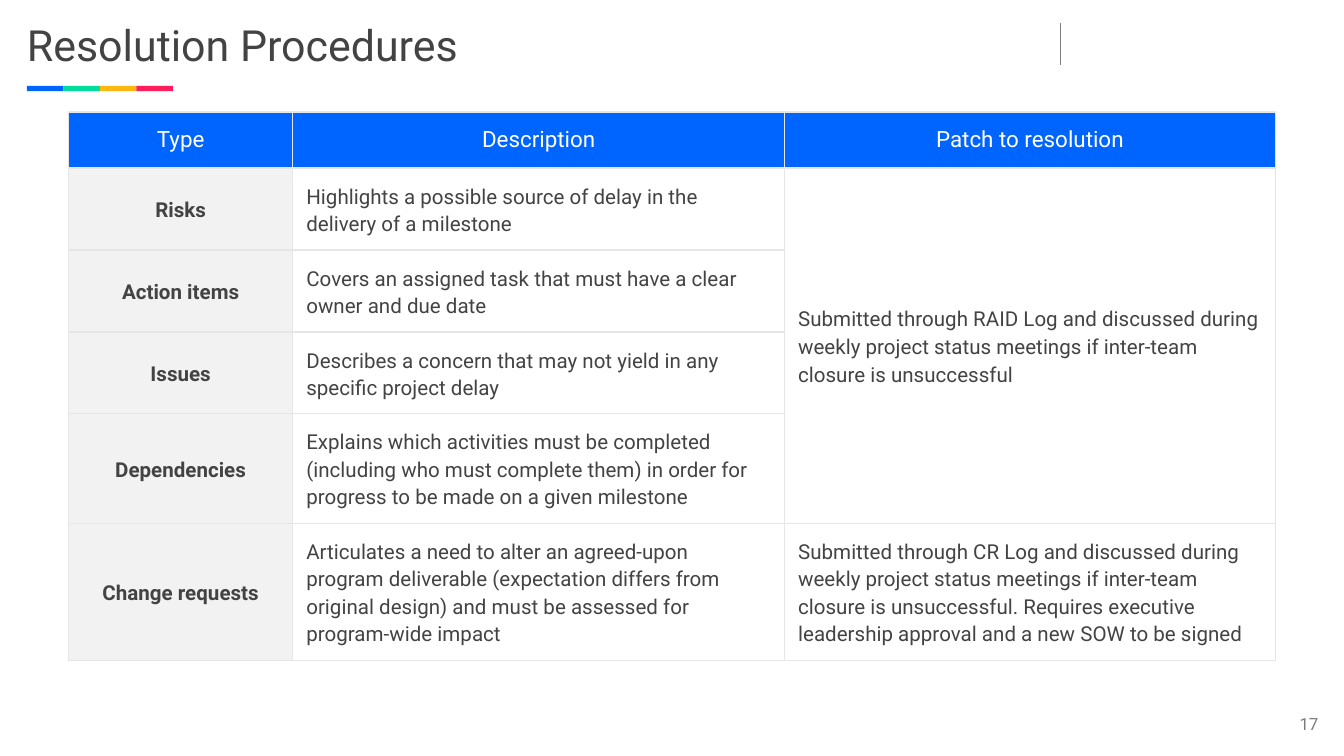
from dataclasses import dataclass

from lxml.etree import SubElement
from pptx import Presentation
from pptx.dml.color import RGBColor
from pptx.enum.shapes import MSO_CONNECTOR, MSO_SHAPE
from pptx.enum.text import MSO_ANCHOR, MSO_AUTO_SIZE, PP_ALIGN
from pptx.oxml.ns import qn
from pptx.util import Pt


@dataclass(frozen=True)
class Theme:
    font: str = "Roboto"
    text: str = "434343"
    muted: str = "7D7D7D"
    white: str = "FFFFFF"
    blue: str = "0064FF"
    label: str = "F2F2F2"
    border: str = "E6E6E6"
    accents: tuple = ("0064FF", "00DC9B", "FFB712", "FF1E5A")
    title_size: float = 23
    head_size: float = 12
    body_size: float = 11
    number_size: float = 9
    rule: float = 0.75


HEADERS = ["Type", "Description", "Patch to resolution"]
ROWS = [
    ["Risks", "Highlights a possible source of delay in the delivery of a milestone",
     "Submitted through RAID Log and discussed during weekly project status meetings "
     "if inter-team closure is unsuccessful"],
    ["Action items", "Covers an assigned task that must have a clear owner and due date", ""],
    ["Issues", "Describes a concern that may not yield in any specific project delay", ""],
    ["Dependencies", "Explains which activities must be completed (including who must complete "
     "them) in order for progress to be made on a given milestone", ""],
    ["Change requests", "Articulates a need to alter an agreed-upon program deliverable "
     "(expectation differs from original design) and must be assessed for program-wide impact",
     "Submitted through CR Log and discussed during weekly project status meetings if "
     "inter-team closure is unsuccessful. Requires executive leadership approval and a new "
     "SOW to be signed"],
]
COL_WIDTHS = [120.2, 263.5, 262.8]
ROW_HEIGHTS = [30, 41, 41, 41, 41, 55]


class SlideBuilder:
    """Adds styled elements to the current slide."""

    def __init__(self, s, theme):
        self.s = s
        self.theme = theme

    def add_text(self, tf, text, size, color, bold=False, align=PP_ALIGN.LEFT, spacing=1.0):
        """Put one styled run into the first paragraph of a frame."""
        p = tf.paragraphs[0]
        p.alignment = align
        p.line_spacing = spacing
        r = p.add_run()
        r.text = text
        r.font.name = self.theme.font
        r.font.size = Pt(size)
        r.font.bold = bold
        r.font.color.rgb = RGBColor.from_string(color)

    def frame(self, tf, anchor, left, other):
        """Set wrapping, anchor and insets of a text frame."""
        tf.word_wrap = True
        tf.auto_size = MSO_AUTO_SIZE.NONE
        tf.vertical_anchor = anchor
        tf.margin_left = Pt(left)
        tf.margin_top = tf.margin_right = tf.margin_bottom = Pt(other)

    def title(self, text, x, y, w, h):
        """Place and fill the title placeholder."""
        sp = self.s.shapes.title
        sp.left, sp.top, sp.width, sp.height = Pt(x), Pt(y), Pt(w), Pt(h)
        self.frame(sp.text_frame, MSO_ANCHOR.MIDDLE, 14.4, 7.2)
        self.add_text(sp.text_frame, text, self.theme.title_size, self.theme.text)

    def page_number(self, text, x, y, w, h):
        """Add the right-aligned page number."""
        tf = self.s.shapes.add_textbox(Pt(x), Pt(y), Pt(w), Pt(h)).text_frame
        self.frame(tf, MSO_ANCHOR.BOTTOM, 0, 0)
        self.add_text(tf, text, self.theme.number_size, self.theme.muted,
                      align=PP_ALIGN.RIGHT, spacing=0.9)

    def accent_bar(self, x, y, w, h):
        """Add a row of equal segments in the accent colours."""
        step = w / len(self.theme.accents)
        for i, color in enumerate(self.theme.accents):
            sp = self.s.shapes.add_shape(
                MSO_SHAPE.RECTANGLE, Pt(x + i * step), Pt(y), Pt(step), Pt(h))
            sp.shadow.inherit = False
            sp.fill.solid()
            sp.fill.fore_color.rgb = RGBColor.from_string(color)
            sp.line.fill.background()

    def divider(self, x, top, bottom):
        """Add a thin vertical line."""
        line = self.s.shapes.add_connector(
            MSO_CONNECTOR.STRAIGHT, Pt(x), Pt(top), Pt(x), Pt(bottom))
        line.line.color.rgb = RGBColor.from_string(self.theme.muted)
        line.line.width = Pt(self.theme.rule)
        SubElement(line._element.spPr, qn("a:effectLst"))

    def borders(self, cell):
        """Draw the four borders of a cell."""
        tc_pr = cell._tc.get_or_add_tcPr()
        for side in ("a:lnL", "a:lnR", "a:lnT", "a:lnB"):
            ln = SubElement(tc_pr, qn(side), w=str(Pt(self.theme.rule)))
            fill = SubElement(ln, qn("a:solidFill"))
            SubElement(fill, qn("a:srgbClr"), val=self.theme.border)

    def cell(self, cell, text, head, label):
        """Style one table cell and add its text."""
        t = self.theme
        cell.vertical_anchor = MSO_ANCHOR.MIDDLE
        cell.margin_left = cell.margin_right = Pt(7.2)
        cell.margin_top = cell.margin_bottom = Pt(7.2)
        self.borders(cell)
        fill = t.blue if head else t.label if label else t.white
        cell.fill.solid()
        cell.fill.fore_color.rgb = RGBColor.from_string(fill)
        if text:
            self.add_text(cell.text_frame, text,
                          t.head_size if head else t.body_size,
                          t.white if head else t.text,
                          bold=label and not head,
                          align=PP_ALIGN.CENTER if head or label else PP_ALIGN.LEFT,
                          spacing=1.0 if head else 1.15)

    def table(self, rows, x, y, widths, heights):
        """Add a table with a header row and a label column."""
        table = self.s.shapes.add_table(
            len(rows), len(widths), Pt(x), Pt(y), Pt(sum(widths)), Pt(sum(heights))).table
        table.horz_banding = False
        for column, width in zip(table.columns, widths):
            column.width = Pt(width)
        for i, (row, height) in enumerate(zip(rows, heights)):
            table.rows[i].height = Pt(height)
            for j, text in enumerate(row):
                self.cell(table.cell(i, j), text, i == 0, j == 0)
        return table


def main():
    """Build the slide and save it."""
    prs = Presentation()
    prs.slide_width, prs.slide_height = Pt(720), Pt(405)
    s = prs.slides.add_slide(prs.slide_layouts[5])
    b = SlideBuilder(s, Theme())
    b.divider(568.2, 12.2, 34.8)
    b.accent_bar(14.4, 46, 78.2, 2.9)
    b.page_number("17", 663.1, 375.1, 43.2, 18)
    b.title("Resolution Procedures", 0, -1.2, 464.4, 50.4)
    table = b.table([HEADERS, *ROWS], 36.7, 60, COL_WIDTHS, ROW_HEIGHTS)
    table.cell(1, 2).merge(table.cell(4, 2))
    prs.save("out.pptx")


if __name__ == "__main__":
    main()
